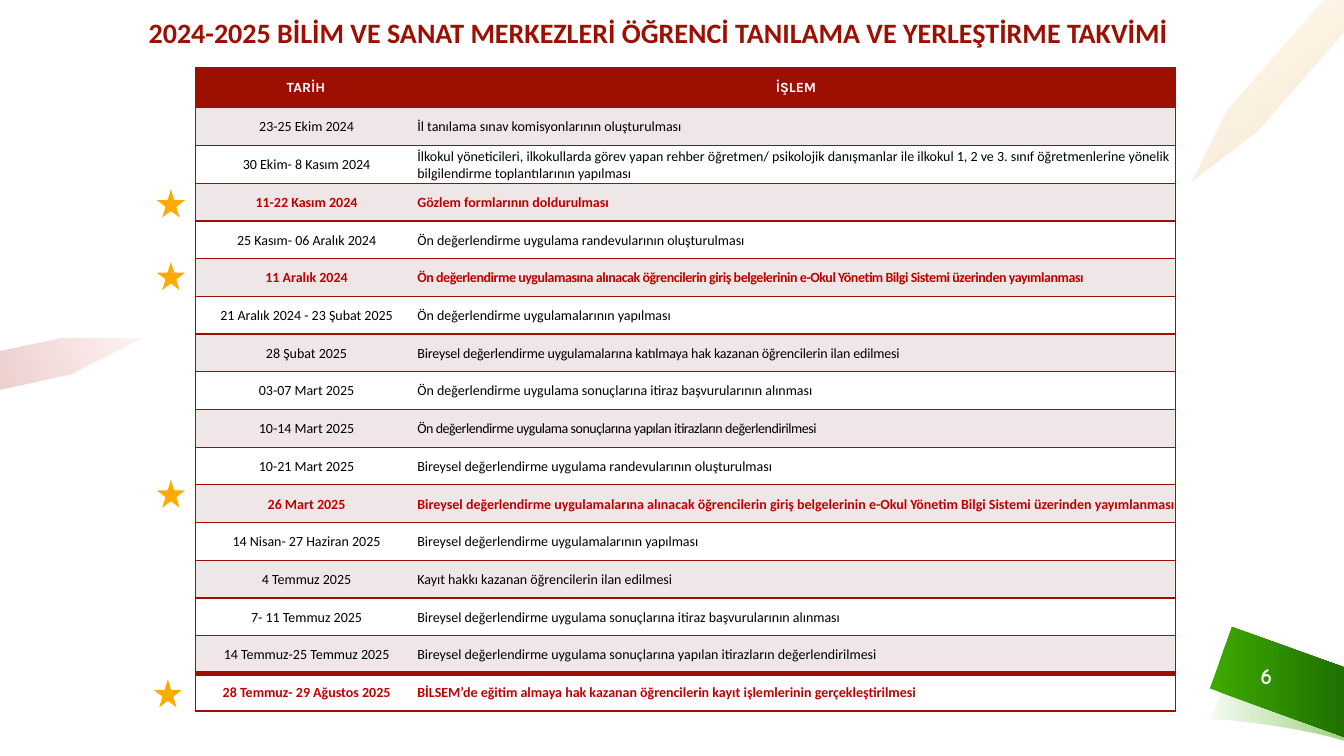
from lxml import etree
from pptx import Presentation
from pptx import util as u
from pptx.dml.color import RGBColor
from pptx.enum import shapes, text
from pptx.oxml import ns

CRIMSON = RGBColor(0x9D, 0x0F, 0x00)
SCARLET = RGBColor(0xD3, 0x0F, 0x00)
ALERT = RGBColor(0xC0, 0x00, 0x00)
BLUSH = RGBColor(0xEF, 0xE7, 0xE7)
AMBER = RGBColor(0xFF, 0xAA, 0x00)
BRONZE = RGBColor(0xC0, 0x74, 0x00)
GREEN = RGBColor(0x3D, 0xA8, 0x00)
FOREST = RGBColor(0x1F, 0x71, 0x00)
WHITE = RGBColor(0xFF, 0xFF, 0xFF)
BLACK = RGBColor(0x00, 0x00, 0x00)

HEADINGS = ("TARİH", "İŞLEM")
CALENDAR = [
    ("23-25 Ekim 2024", "İl tanılama sınav komisyonlarının oluşturulması"),
    ("30 Ekim- 8 Kasım 2024", "İlkokul yöneticileri, ilkokullarda görev yapan rehber öğretmen/ psikolojik danışmanlar ile ilkokul 1, 2 ve 3. sınıf öğretmenlerine yönelik bilgilendirme toplantılarının yapılması"),
    ("11-22 Kasım 2024", "Gözlem formlarının doldurulması"),
    ("25 Kasım- 06 Aralık 2024", "Ön değerlendirme uygulama randevularının oluşturulması"),
    ("11 Aralık 2024", "Ön değerlendirme uygulamasına alınacak öğrencilerin giriş belgelerinin e-Okul Yönetim Bilgi Sistemi üzerinden yayımlanması"),
    ("21 Aralık 2024 - 23 Şubat 2025", "Ön değerlendirme uygulamalarının yapılması"),
    ("28 Şubat 2025", "Bireysel değerlendirme uygulamalarına katılmaya hak kazanan öğrencilerin ilan edilmesi"),
    ("03-07 Mart 2025", "Ön değerlendirme uygulama sonuçlarına itiraz başvurularının alınması"),
    ("10-14 Mart 2025", "Ön değerlendirme uygulama sonuçlarına yapılan itirazların değerlendirilmesi"),
    ("10-21 Mart 2025", "Bireysel değerlendirme uygulama randevularının oluşturulması"),
    ("26 Mart 2025", "Bireysel değerlendirme uygulamalarına alınacak öğrencilerin giriş belgelerinin e-Okul Yönetim Bilgi Sistemi üzerinden yayımlanması"),
    ("14 Nisan- 27 Haziran 2025", "Bireysel değerlendirme uygulamalarının yapılması"),
    ("4 Temmuz 2025", "Kayıt hakkı kazanan öğrencilerin ilan edilmesi"),
    ("7- 11 Temmuz 2025", "Bireysel değerlendirme uygulama sonuçlarına itiraz başvurularının alınması"),
    ("14 Temmuz-25 Temmuz 2025", "Bireysel değerlendirme uygulama sonuçlarına yapılan itirazların değerlendirilmesi"),
    ("28 Temmuz- 29 Ağustos 2025", "BİLSEM’de eğitim almaya hak kazanan öğrencilerin kayıt işlemlerinin gerçekleştirilmesi"),
]
KEY_ROWS = {3, 5, 11, 16}
TIGHT_ROWS = {5: -0.3, 7: -0.1, 9: -0.3}
STARS = [(1.52, 1.84), (1.52, 2.56), (1.52, 4.72), (1.49, 6.7)]


def curve(start, pull_1, pull_2, end, steps=12):
    weights = [((1 - t) ** 3, 3 * t * (1 - t) ** 2, 3 * t * t * (1 - t), t ** 3)
               for t in (i / steps for i in range(steps + 1))]
    return [tuple(sum(w * point[axis] for w, point in zip(row, (start, pull_1, pull_2, end)))
                  for axis in (0, 1)) for row in weights]


class CalendarSlide:
    def __init__(self, deck, font="Calibri"):
        self.slide = deck.slides.add_slide(deck.slide_layouts[5])
        self.font = font

    def put_text(self, frame, words, size, color, bold=False, align=text.PP_ALIGN.CENTER,
                 font=None, spacing=0):
        frame.text = words
        frame.paragraphs[0].alignment = align
        run = frame.paragraphs[0].runs[0]
        run.font.name = font or self.font
        run.font.size = u.Pt(size)
        run.font.bold = bold
        run.font.color.rgb = color
        if spacing:
            run.font._element.set("spc", str(round(spacing * 100)))

    def title(self, words, left, top, width, height):
        heading = self.slide.shapes.title
        heading.left, heading.top = u.Inches(left), u.Inches(top)
        heading.width, heading.height = u.Inches(width), u.Inches(height)
        frame = heading.text_frame
        frame.auto_size = text.MSO_AUTO_SIZE.NONE
        frame.vertical_anchor = text.MSO_ANCHOR.TOP
        self.put_text(frame, words, 20, CRIMSON, True)

    def page_number(self, words, left, top, width, height):
        box = self.slide.shapes.add_textbox(*map(u.Inches, (left, top, width, height)))
        box.text_frame.word_wrap = True
        box.text_frame.vertical_anchor = text.MSO_ANCHOR.MIDDLE
        self.put_text(box.text_frame, words, 16, WHITE, True, font="Comic Neue")

    def ribbon(self, points, stops, angle):
        corners = [(u.Inches(x), u.Inches(y)) for x, y in points]
        builder = self.slide.shapes.build_freeform(*corners[0])
        builder.add_line_segments(corners[1:], close=True)
        ribbon = builder.convert_to_shape()
        ribbon.shadow.inherit = False
        ribbon.line.fill.background()
        ribbon.fill.gradient()
        ribbon.fill.gradient_angle = -angle % 360
        for stop, (position, color, opacity) in zip(ribbon.fill.gradient_stops, stops):
            stop.position = position
            stop.color.rgb = color
            if opacity < 100:
                tint = stop._gs.find(ns.qn("a:srgbClr"))
                etree.SubElement(tint, ns.qn("a:alpha")).set("val", str(opacity * 1000))

    def star(self, left, top, size=0.35):
        star = self.slide.shapes.add_shape(
            shapes.MSO_SHAPE.STAR_5_POINT, *map(u.Inches, (left, top, size, size)))
        star.shadow.inherit = False
        star.fill.solid()
        star.fill.fore_color.rgb = AMBER
        star.line.color.rgb = WHITE
        star.line.width = u.Pt(1.5)

    def borders(self, cell, **widths):
        properties = cell._tc.get_or_add_tcPr()
        for place, side in enumerate("LRTB"):
            width = widths.get(side, 0)
            edge = etree.Element(ns.qn("a:ln" + side), w=str(u.Pt(width)))
            if width:
                fill = etree.SubElement(edge, ns.qn("a:solidFill"))
                etree.SubElement(fill, ns.qn("a:srgbClr")).set("val", str(CRIMSON))
            else:
                etree.SubElement(edge, ns.qn("a:noFill"))
            properties.insert(place, edge)

    def calendar(self, rows, left, top, widths, header_height, row_height):
        height = header_height + row_height * (len(rows) - 1)
        table = self.slide.shapes.add_table(
            len(rows), len(widths), *map(u.Inches, (left, top, sum(widths), height))).table
        table.first_row = table.horz_banding = False
        for column, width in zip(table.columns, widths):
            column.width = u.Inches(width)
        last = len(rows) - 1
        for r, entry in enumerate(rows):
            table.rows[r].height = u.Inches(row_height if r else header_height)
            for c, words in enumerate(entry):
                cell = table.cell(r, c)
                cell.vertical_anchor = text.MSO_ANCHOR.MIDDLE
                cell.margin_left = cell.margin_top = u.Inches(0.01 if r else 0)
                cell.margin_right = cell.margin_bottom = 0
                cell.fill.solid()
                if r == 0:
                    cell.fill.fore_color.rgb = CRIMSON
                    self.put_text(cell.text_frame, words, 10, WHITE, True, font="Karla")
                else:
                    key = r in KEY_ROWS
                    cell.fill.fore_color.rgb = BLUSH if r % 2 else WHITE
                    self.put_text(cell.text_frame, words, 10, ALERT if key else BLACK, key,
                                  text.PP_ALIGN.LEFT if c else text.PP_ALIGN.CENTER,
                                  spacing=TIGHT_ROWS.get(r, 0) if c else 0)
                self.borders(cell, T=4 if r == last else 1, B=4 if r == last - 1 else 1,
                             **{"R" if c else "L": 1})


def main():
    deck = Presentation()
    deck.slide_width, deck.slide_height = u.Inches(13.33), u.Inches(7.5)
    page = CalendarSlide(deck)
    shade = (curve((12.02, 7.13), (12.02, 7.13), (12.78, 7.18), (13.33, 7.35))
             + curve((13.33, 6.68), (12.72, 6.51), (12.24, 6.52), (12.24, 6.52)))
    page.ribbon(shade, [(0.03, GREEN, 6), (1, GREEN, 50)], 0)
    page.ribbon([(13.33, 6.62), (12.22, 6.22), (12, 6.83), (13.33, 7.31)],
                [(0.03, GREEN, 100), (1, FOREST, 100)], 0)
    page.ribbon([(1.4, 3.36), (0.58, 3.36), (0, 3.48), (0, 3.86), (0.7, 3.71)],
                [(0, SCARLET, 5), (1, CRIMSON, 20)], 164)
    page.ribbon([(13.12, 0), (12.17, 1.09), (11.82, 1.8), (12.47, 1.3), (13.33, 0.31), (13.33, 0)],
                [(0, AMBER, 5), (1, BRONZE, 20)], 53)
    page.page_number("6", 12.21, 6.5, 0.7, 0.4)
    page.title("2024-2025 BİLİM VE SANAT MERKEZLERİ ÖĞRENCİ TANILAMA VE YERLEŞTİRME TAKVİMİ",
               0.67, 0.1, 11.72, 0.44)
    page.calendar([HEADINGS] + CALENDAR, 1.94, 0.67, (2.19, 7.53), 0.4, 5.99 / len(CALENDAR))
    for left, top in STARS:
        page.star(left, top)
    deck.save("out.pptx")


if __name__ == "__main__":
    main()
